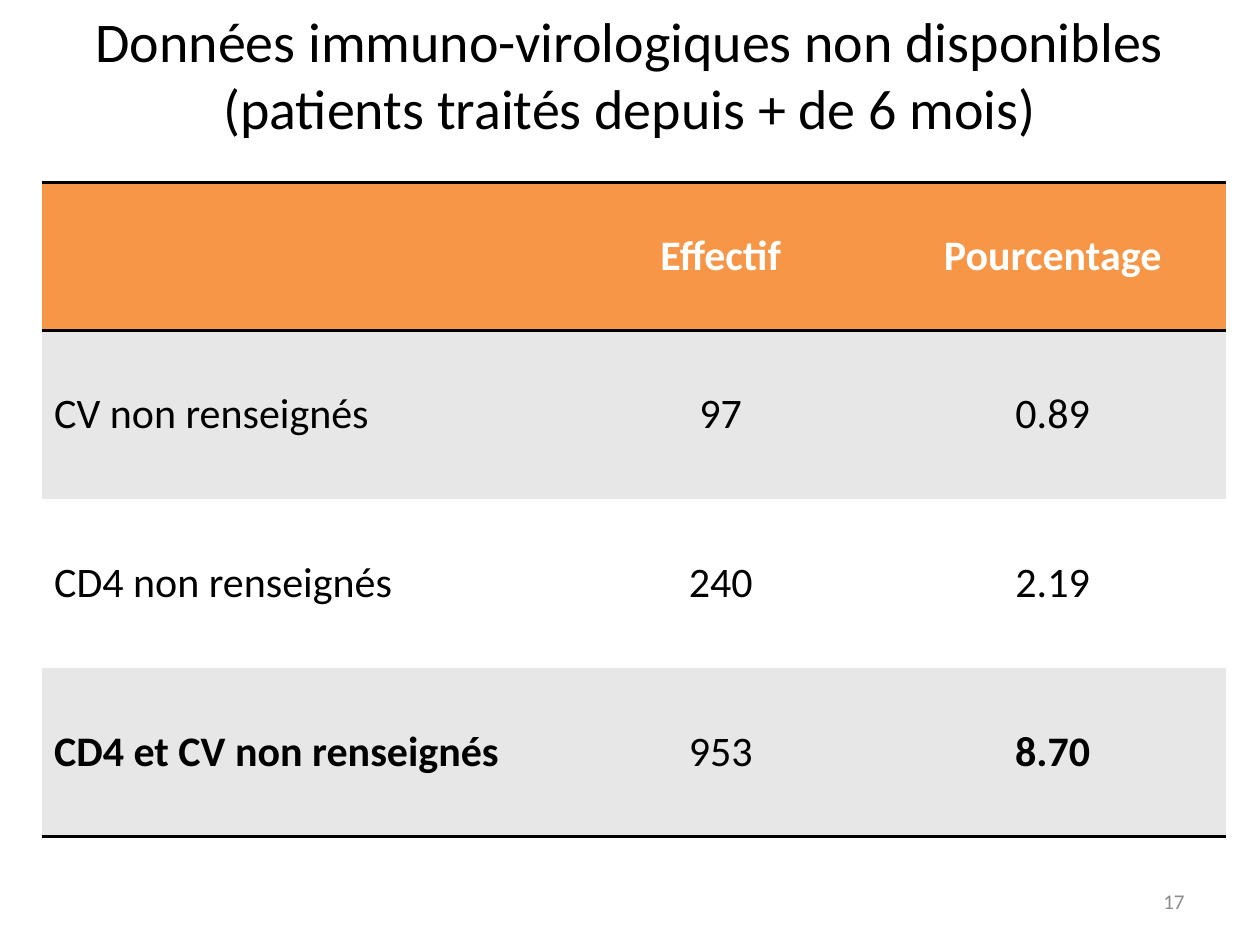
from lxml import etree
from pptx import Presentation
from pptx.dml.color import RGBColor
from pptx.enum import text
from pptx.oxml import ns
from pptx.util import Inches, Pt

BLACK = RGBColor(0x00, 0x00, 0x00)
WHITE = RGBColor(0xFF, 0xFF, 0xFF)
ORANGE = RGBColor(0xF7, 0x96, 0x46)
PALE = RGBColor(0xE7, 0xE7, 0xE7)
GREY = RGBColor(0x8C, 0x8C, 0x8C)

LEFT, CENTER, RIGHT = text.PP_ALIGN.LEFT, text.PP_ALIGN.CENTER, text.PP_ALIGN.RIGHT
TOP, MIDDLE = text.MSO_ANCHOR.TOP, text.MSO_ANCHOR.MIDDLE

COLS = [4.13, 2.52, 2.75]
HEIGHTS = [1.17, 1.34, 1.34, 1.34]
ROWS = [
    ["", "Effectif", "Pourcentage"],
    ["CV non renseignés", "97", "0.89"],
    ["CD4 non renseignés", "240", "2.19"],
    ["CD4 et CV non renseignés", "953", "8.70"],
]
STRONG = {(0, 1), (0, 2), (3, 0), (3, 2)}


def write(frame, words, align, size, color, bold=False):
    para = frame.paragraphs[0]
    para.alignment = align
    run = para.add_run()
    run.text = words
    font = {"name": "Calibri", "size": Pt(size), "bold": bold}
    for key, value in font.items():
        setattr(run.font, key, value)
    run.font.color.rgb = color


def label(slide, box, words, align, anchor, size, color):
    frame = slide.shapes.add_textbox(*map(Inches, box)).text_frame
    frame.word_wrap = True
    frame.vertical_anchor = anchor
    write(frame, words, align, size, color)


def border(cell, ruled):
    props = cell._tc.get_or_add_tcPr()
    for spot, side in enumerate(["lnL", "lnR", "lnT", "lnB"]):
        line = etree.Element(ns.qn("a:" + side), w=str(Pt(2)))
        if side in ruled:
            fill = etree.SubElement(line, ns.qn("a:solidFill"))
            etree.SubElement(fill, ns.qn("a:srgbClr"), val=str(BLACK))
        else:
            etree.SubElement(line, ns.qn("a:noFill"))
        props.insert(spot, line)


def grid(slide, box):
    shape = slide.shapes.add_table(len(ROWS), len(COLS), *map(Inches, box))
    table = shape.table
    for col, width in zip(table.columns, COLS):
        col.width = Inches(width)
    fills = [ORANGE, PALE, WHITE, PALE]
    rules = [{"lnT", "lnB"}, {"lnT"}, set(), {"lnB"}]
    for r, words in enumerate(ROWS):
        table.rows[r].height = Inches(HEIGHTS[r])
        for c, word in enumerate(words):
            cell = table.cell(r, c)
            cell.vertical_anchor = MIDDLE
            cell.fill.solid()
            cell.fill.fore_color.rgb = fills[r]
            border(cell, rules[r])
            if word:
                write(cell.text_frame, word, CENTER if c else LEFT, 24,
                      BLACK if r else WHITE, (r, c) in STRONG)


def main():
    deck = Presentation()
    deck.slide_width, deck.slide_height = Inches(10), Inches(7.5)
    slide = deck.slides.add_slide(deck.slide_layouts[6])
    label(slide, (7.17, 6.95, 2.33, 0.4), "17", RIGHT, MIDDLE, 12, GREY)
    label(slide, (0, 0, 10, 1.18),
          "Données immuno-virologiques non disponibles (patients traités depuis + de 6 mois)",
          CENTER, TOP, 32, BLACK)
    grid(slide, (0.33, 1.45, sum(COLS), sum(HEIGHTS)))
    deck.save("out.pptx")


if __name__ == "__main__":
    main()
